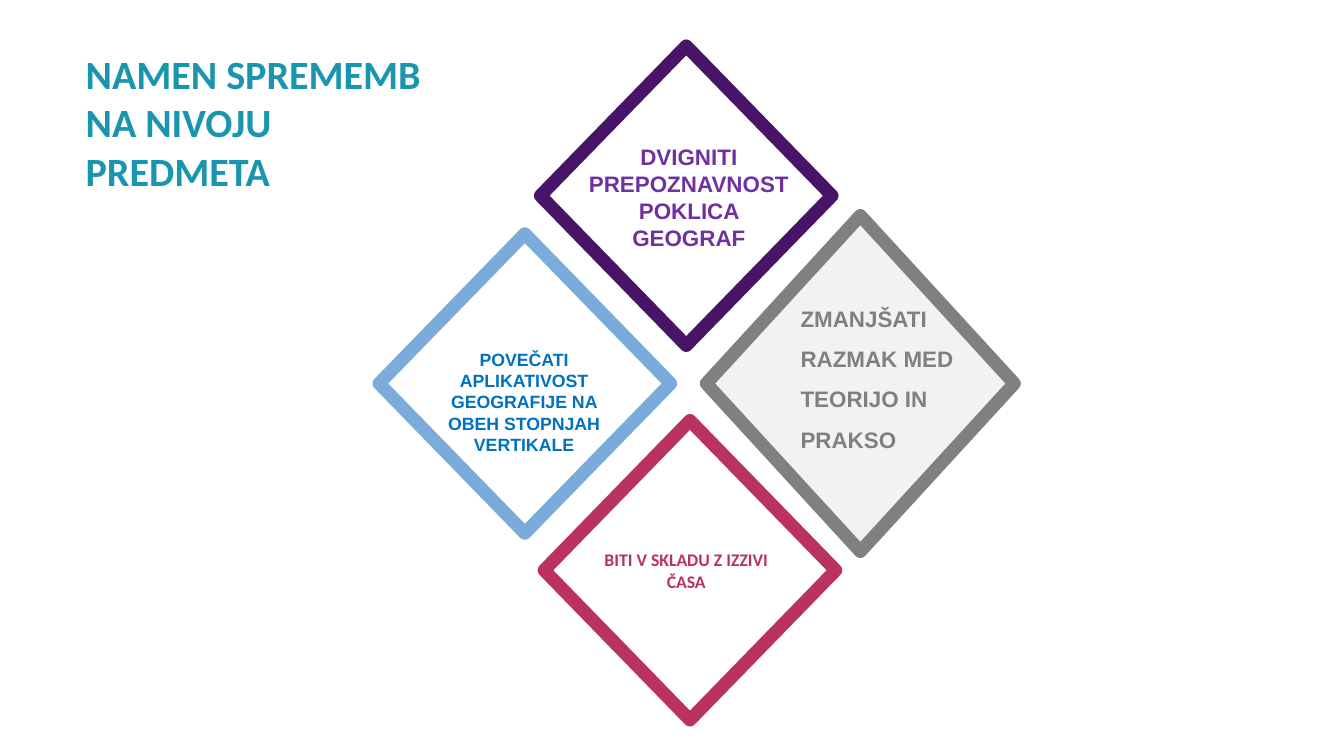
"""Build a slide with four diamonds that name the aims of the subject changes."""
from dataclasses import dataclass
from typing import Any

from lxml import etree
from pptx import Presentation
from pptx import util as u
from pptx.dml.color import RGBColor
from pptx.enum import shapes, text
from pptx.oxml.ns import qn


def rgb(code):
    """Turn a hex string into a colour."""
    return RGBColor.from_string(code)


@dataclass
class Deck:
    """Style and current slide."""
    s: Any
    font: str = "Arial"
    border: float = 7

    def diamond(self, cx, cy, w, h, line, fill="FFFFFF"):
        """Draw a round-cornered diamond around a centre point."""
        sp = self.s.shapes.add_shape(
            shapes.MSO_SHAPE.DIAMOND,
            u.Cm(cx - w / 2), u.Cm(cy - h / 2), u.Cm(w), u.Cm(h))
        sp.shadow.inherit = False
        sp.fill.solid()
        sp.fill.fore_color.rgb = rgb(fill)
        sp.line.color.rgb = rgb(line)
        sp.line.width = u.Pt(self.border)
        etree.SubElement(sp.line._get_or_add_ln(), qn("a:round"))

    def label(self, box, words, size, color, font=None, centred=True,
              spacing=None, inset=(0.25, 0.13)):
        """Write a bold wrapped text in a box."""
        sp = self.s.shapes.add_textbox(*map(u.Cm, box))
        tf = sp.text_frame
        tf.word_wrap = True
        tf.margin_left = tf.margin_right = u.Cm(inset[0])
        tf.margin_top = tf.margin_bottom = u.Cm(inset[1])
        anchor = text.MSO_ANCHOR
        tf.vertical_anchor = anchor.MIDDLE if centred else anchor.TOP
        tf.text = words
        p = tf.paragraphs[0]
        p.alignment = text.PP_ALIGN.CENTER if centred else text.PP_ALIGN.LEFT
        p.line_spacing = spacing
        r = p.runs[0]
        r.font.name = font or self.font
        r.font.size = u.Pt(size)
        r.font.bold = True
        r.font.color.rgb = rgb(color)


def main():
    """Lay out the slide and save it."""
    prs = Presentation()
    prs.slide_width, prs.slide_height = u.Cm(25.4), u.Cm(14.29)
    deck = Deck(prs.slides.add_slide(prs.slide_layouts[6]))

    for cx, cy, line in ((9.92, 7.25, "7BABDB"),
                         (12.97, 3.7, "481467"),
                         (13.04, 10.78, "BA325E")):
        deck.diamond(cx, cy, 5.51, 5.66, line)
    deck.diamond(16.26, 7.25, 5.82, 6.35, "808080", "F2F2F2")

    deck.label((14.88, 5.38, 3.68, 4.01),
               "ZMANJŠATI RAZMAK MED TEORIJO IN PRAKSO",
               12, "808080", centred=False, spacing=1.5)
    deck.label((10.77, 2.57, 4.5, 2.31),
               "DVIGNITI PREPOZNAVNOST POKLICA GEOGRAF", 12, "7030A0")
    deck.label((8, 6.25, 3.81, 2.69),
               "POVEČATI APLIKATIVOST GEOGRAFIJE NA OBEH STOPNJAH VERTIKALE",
               9.5, "0070C0")
    deck.label((11.13, 10.29, 3.68, 0.99), "BITI V SKLADU Z IZZIVI ČASA",
               9.5, "BA325E", "Calibri", inset=(0.18, 0.08))
    deck.label((1.37, 0.69, 7.01, 4.32), "NAMEN SPREMEMB NA NIVOJU PREDMETA",
               21.5, "1A95AE", "Calibri", centred=False, inset=(0.25, 0.25))

    prs.save("out.pptx")


if __name__ == "__main__":
    main()
